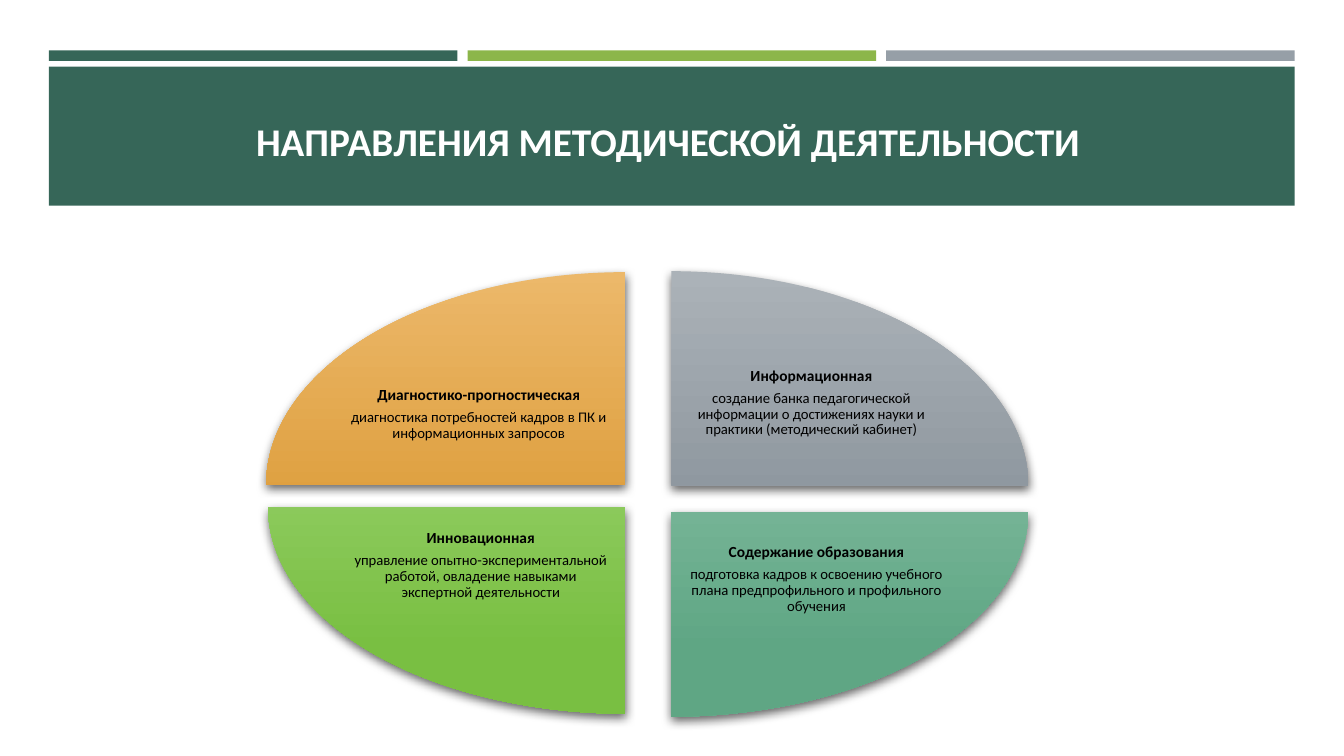
from dataclasses import dataclass

from lxml.etree import SubElement
from pptx import Presentation
from pptx.dml.color import RGBColor
from pptx.enum.shapes import MSO_SHAPE
from pptx.enum.text import MSO_ANCHOR, PP_ALIGN
from pptx.oxml.ns import qn
from pptx.util import Inches, Pt

CELL = Inches(0.1)
COLUMNS, ROWS = 133.33, 75


@dataclass(frozen=True)
class Theme:
    font: str = "Calibri"
    green: str = "366658"
    lime: str = "8CB64A"
    gray: str = "969FA7"
    white: str = "FFFFFF"
    black: str = "000000"
    title_size: float = 28
    heading_size: float = 11
    body_size: float = 10.5


@dataclass(frozen=True)
class Box:
    left: float
    top: float
    width: float
    height: float

    def inner(self, left, top, width, height):
        return Box(self.left + left, self.top + top, width, height)

    def lengths(self):
        return [round(cells * CELL) for cells in (self.left, self.top, self.width, self.height)]


@dataclass(frozen=True)
class Sector:
    heading: str
    body: str
    pie: tuple
    angles: tuple
    text: tuple
    light: str
    dark: str


THEME = Theme()

SECTORS = [
    Sector("Информационная",
           "создание банка педагогической информации о достижениях науки и практики (методический кабинет)",
           (4.8, 0, 70.8, 42.5), (162, 0), (41, 6.9), "ABB2B8", "7C868F"),
    Sector("Содержание образования",
           "подготовка кадров к освоению учебного плана предпрофильного и профильного обучения",
           (4.8, 3.6, 70.8, 40.6), (0, 54), (41.5, 24.4), "95C8AF", "5FA684"),
    Sector("Инновационная",
           "управление опытно-экспериментальной работой, овладение навыками экспертной деятельности",
           (0.2, 3, 70.9, 40.9), (54, 108), (8.2, 23), "A6D980", "79BF42"),
    Sector("Диагностико-прогностическая",
           "диагностика потребностей кадров в ПК и информационных запросов",
           (0, 0.1, 71.2, 42.2), (108, 162), (8, 8), "ECB86A", "D69126"),
]


def write(paragraph, text, size, color=THEME.black, bold=False, spacing=1.0, after=0):
    paragraph.alignment = PP_ALIGN.CENTER
    paragraph.line_spacing = spacing
    paragraph.space_before = Pt(0)
    paragraph.space_after = Pt(after)
    run = paragraph.add_run()
    run.text = text
    run.font.name = THEME.font
    run.font.size = Pt(size)
    run.font.bold = bold
    run.font.color.rgb = RGBColor.from_string(color)


def add_bar(slide, box, color):
    bar = slide.shapes.add_shape(MSO_SHAPE.RECTANGLE, *box.lengths())
    bar.shadow.inherit = False
    bar.fill.solid()
    bar.fill.fore_color.rgb = RGBColor.from_string(color)
    bar.line.fill.background()


def add_soft_shadow(shape):
    shape.shadow.inherit = False
    effects = shape._element.spPr.find(qn("a:effectLst"))
    shadow = SubElement(effects, qn("a:outerShdw"), blurRad=str(Pt(7)), dist=str(Pt(3)),
                        dir=str(84 * 60000), rotWithShape="0")
    color = SubElement(shadow, qn("a:srgbClr"), val=THEME.black)
    SubElement(color, qn("a:alpha"), val="60000")


def add_header(slide, box):
    gap = 1
    width = (box.width - 2 * gap) / 3
    for index, color in enumerate((THEME.green, THEME.lime, THEME.gray)):
        add_bar(slide, box.inner(index * (width + gap), 0, width, 1.05), color)
    add_bar(slide, box.inner(0, 1.6, box.width, 13.8), THEME.green)

    title = slide.shapes.title
    title.left, title.top, title.width, title.height = box.inner(1.1, 3, 120.6, 8.8).lengths()
    title.text_frame.word_wrap = True
    title.text_frame.vertical_anchor = MSO_ANCHOR.BOTTOM
    write(title.text_frame.paragraphs[0], "НАПРАВЛЕНИЯ МЕТОДИЧЕСКОЙ ДЕЯТЕЛЬНОСТИ",
          THEME.title_size, color=THEME.white, bold=True)
    slide.shapes._spTree.append(title._element)


def add_sector(slide, box, sector):
    pie = slide.shapes.add_shape(MSO_SHAPE.PIE, *box.inner(*sector.pie).lengths())
    pie.adjustments[0], pie.adjustments[1] = sector.angles
    pie.line.fill.background()
    pie.fill.gradient()
    pie.fill.gradient_angle = 270
    stops = zip(pie.fill.gradient_stops, (sector.light, sector.dark), (0, 0.84))
    for stop, color, position in stops:
        stop.color.rgb = RGBColor.from_string(color)
        stop.position = position
    add_soft_shadow(pie)

    label = slide.shapes.add_textbox(*box.inner(*sector.text, 26.2, 12.4).lengths())
    frame = label.text_frame
    frame.word_wrap = True
    frame.vertical_anchor = MSO_ANCHOR.MIDDLE
    frame.margin_left = frame.margin_right = frame.margin_top = frame.margin_bottom = Inches(0.02)
    write(frame.paragraphs[0], sector.heading, THEME.heading_size, bold=True, spacing=0.9, after=4)
    write(frame.add_paragraph(), sector.body, THEME.body_size, spacing=0.9)


def add_sectors(slide, box):
    for sector in SECTORS:
        add_sector(slide, box, sector)


def main():
    presentation = Presentation()
    presentation.slide_width = round(COLUMNS * CELL)
    presentation.slide_height = ROWS * CELL
    slide = presentation.slides.add_slide(presentation.slide_layouts[5])
    add_header(slide, Box(4.85, 5, 123.6, 15.4))
    add_sectors(slide, Box(26.4, 26.9, 75.6, 44.2))
    presentation.save("out.pptx")


if __name__ == "__main__":
    main()
